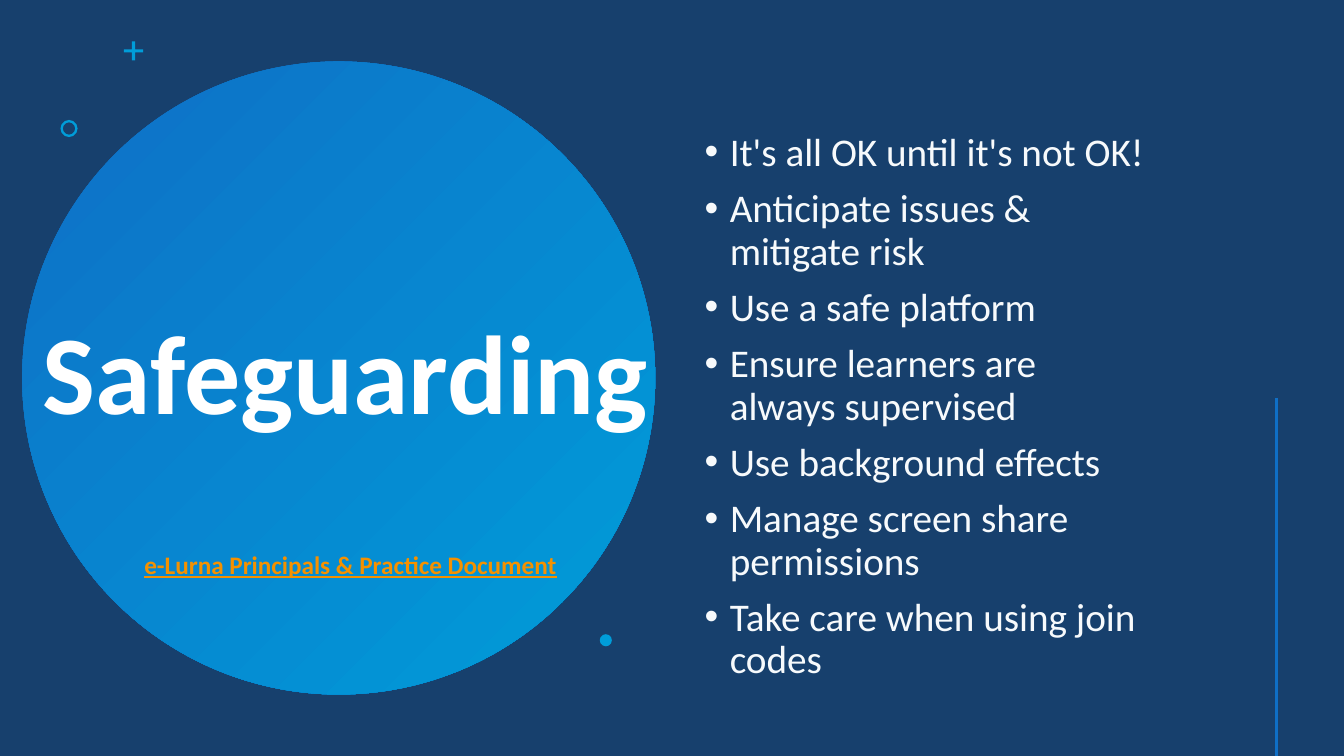
from dataclasses import dataclass

from lxml.etree import SubElement
from pptx import Presentation
from pptx.dml.color import RGBColor as RGB
from pptx.enum.shapes import MSO_CONNECTOR as CONN, MSO_SHAPE as SHAPE
from pptx.enum.text import MSO_ANCHOR as ANCHOR, MSO_AUTO_SIZE as AUTO, PP_ALIGN as ALIGN
from pptx.oxml.ns import qn
from pptx.util import Inches, Pt


@dataclass(frozen=True)
class Theme:
    font: str = "Calibri"
    navy: str = "17406D"
    blue: str = "0F6FC6"
    cyan: str = "009DD9"
    white: str = "FFFFFF"
    pale: str = "F7FAFC"
    orange: str = "F49100"
    title: int = 80
    body: int = 28
    link: int = 18


THEME = Theme()
COLS, ROWS = 160, 90
CELL = Inches(7.5) / ROWS

POINTS = [
    "It's all OK until it's not OK!",
    "Anticipate issues & mitigate\u00a0risk",
    "Use a safe\u00a0platform",
    "Ensure learners are always\u00a0supervised",
    "Use background effects",
    "Manage screen share permissions",
    "Take care when using join codes",
]


def grid(*cells):
    return [round(c * CELL) for c in cells]


def write(sp, lines, size, color, bold=False, underline=False, align=ALIGN.LEFT,
          anchor=ANCHOR.TOP, auto=AUTO.NONE, spacing=None, before=0, bullet=False):
    tf = sp.text_frame
    tf.word_wrap = True
    tf.auto_size = auto
    tf.vertical_anchor = anchor
    for i, line in enumerate(lines):
        p = tf.add_paragraph() if i else tf.paragraphs[0]
        p.alignment = align
        p.line_spacing = spacing
        p.space_before = Pt(before)
        if bullet:
            pPr = p._p.get_or_add_pPr()
            pPr.set("marL", str(Inches(0.25)))
            pPr.set("indent", str(Inches(-0.25)))
            SubElement(pPr, qn("a:buFont")).set("typeface", "Arial")
            SubElement(pPr, qn("a:buChar")).set("char", "•")
        r = p.add_run()
        r.text = line
        font = r.font
        font.name, font.size = THEME.font, Pt(size)
        font.bold, font.underline = bold, underline
        font.color.rgb = RGB.from_string(color)


def add_ornament(s, kind, left, top, size, adjust=None):
    sp = s.shapes.add_shape(kind, *grid(left, top, size, size))
    sp.shadow.inherit = False
    sp.line.fill.background()
    sp.fill.solid()
    sp.fill.fore_color.rgb = RGB.from_string(THEME.cyan)
    if adjust is not None:
        sp.adjustments[0] = adjust
    return sp


def add_disc(s, left, top, size):
    sp = add_ornament(s, SHAPE.OVAL, left, top, size)
    sp.fill.gradient()
    sp.fill.gradient_angle = 315
    for stop, color, position in zip(sp.fill.gradient_stops, (THEME.blue, THEME.cyan), (0, 1)):
        stop.color.rgb = RGB.from_string(color)
        stop.position = position
    s.shapes._spTree.insert(2, sp._element)


def add_rule(s, x, top, bottom):
    line = s.shapes.add_connector(CONN.STRAIGHT, *grid(x, top, x, bottom))
    line.line.color.rgb = RGB.from_string(THEME.blue)
    line.line.width = Pt(2)
    SubElement(line._element.spPr, qn("a:effectLst"))


def add_title(s, text, *cells):
    sp = s.shapes.title
    sp.left, sp.top, sp.width, sp.height = grid(*cells)
    write(sp, [text], THEME.title, THEME.white, bold=True, align=ALIGN.CENTER,
          anchor=ANCHOR.MIDDLE, spacing=0.9)


def add_text(s, lines, cells, size, color, **fmt):
    write(s.shapes.add_textbox(*grid(*cells)), lines, size, color, **fmt)


def main():
    prs = Presentation()
    prs.slide_width, prs.slide_height = grid(COLS, ROWS)
    s = prs.slides.add_slide(prs.slide_layouts[5])
    s.background.fill.solid()
    s.background.fill.fore_color.rgb = RGB.from_string(THEME.navy)

    add_disc(s, 2.64, 7.32, 75.36)
    add_title(s, "Safeguarding", 0.6, 9.5, 81.1, 71)
    add_ornament(s, SHAPE.CROSS, 14.76, 4.92, 2.28, adjust=0.42)
    add_ornament(s, SHAPE.DONUT, 7.2, 14.28, 2.04, adjust=0.14)
    add_text(s, POINTS, (82.7, 7.1, 62.6, 82.8), THEME.body, THEME.pale,
             anchor=ANCHOR.MIDDLE, spacing=0.9, before=10, bullet=True)
    add_ornament(s, SHAPE.OVAL, 71.4, 75.5, 1.44)
    add_rule(s, 152, 47.4, ROWS)
    add_text(s, ["e-Lurna Principals & Practice Document"], (16, 64.8, 52, 4.8),
             THEME.link, THEME.orange, bold=True, underline=True,
             auto=AUTO.SHAPE_TO_FIT_TEXT)
    prs.save("out.pptx")


if __name__ == "__main__":
    main()
